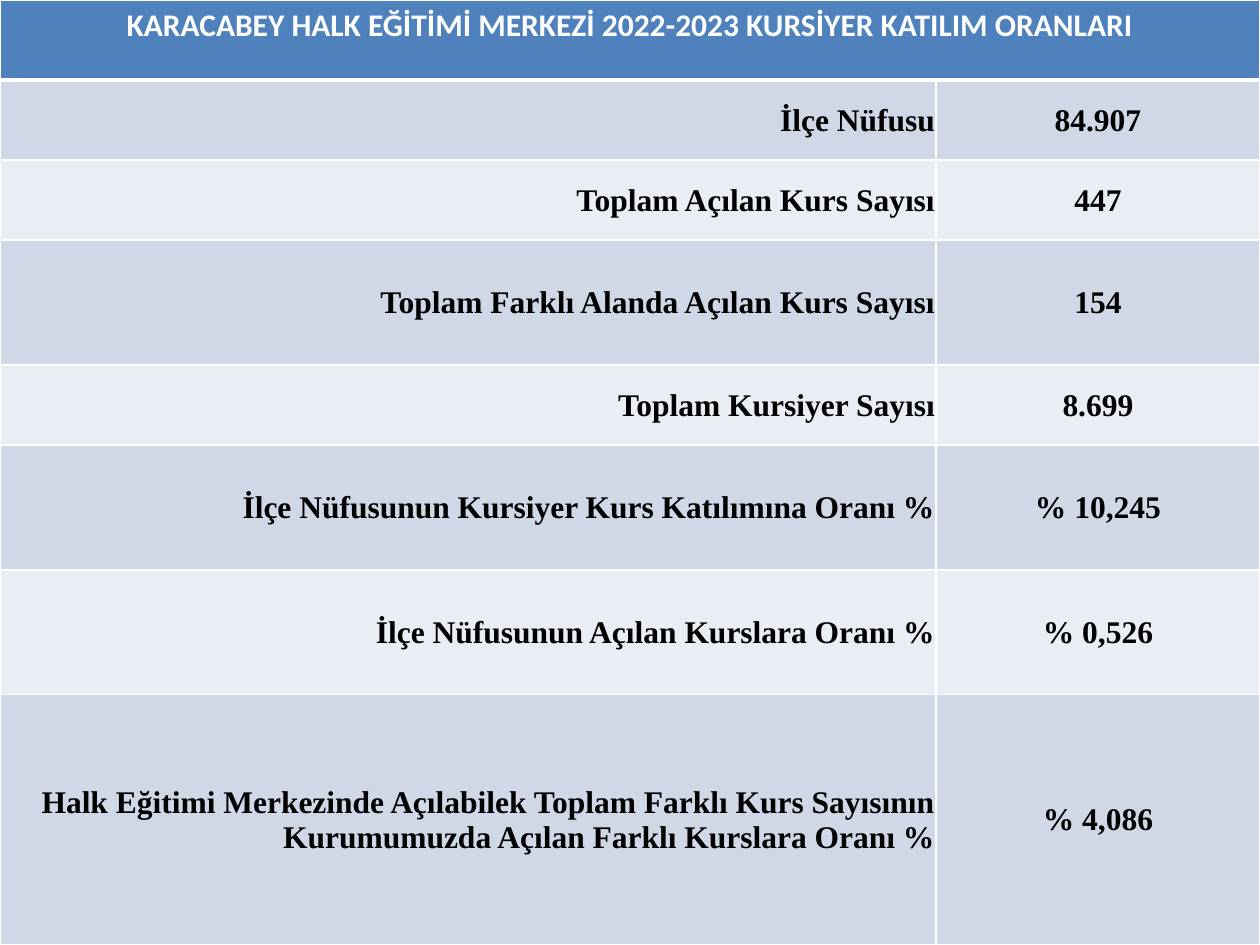
from lxml import etree
from pptx import Presentation
from pptx.dml.color import RGBColor
from pptx.enum.text import MSO_ANCHOR, PP_ALIGN
from pptx.oxml.ns import qn
from pptx.util import Pt

CENTER, RIGHT = PP_ALIGN.CENTER, PP_ALIGN.RIGHT
TOP, MIDDLE = MSO_ANCHOR.TOP, MSO_ANCHOR.MIDDLE
PX = 914400 // 126

THEME = {
    "header": "4F81BD",
    "bands": ("D0D8E8", "E9EDF4"),
    "border": "FFFFFF",
    "header_text": "FFFFFF",
    "body_text": "000000",
    "header_font": "Calibri",
    "body_font": "Times New Roman",
    "size": Pt(18),
    "thin": Pt(1),
    "thick": Pt(3),
}

TITLE = "KARACABEY HALK EĞİTİMİ MERKEZİ 2022-2023 KURSİYER KATILIM ORANLARI"
FIGURES = [
    ("İlçe Nüfusu", "84.907", 80),
    ("Toplam Açılan Kurs Sayısı", "447", 80),
    ("Toplam Farklı Alanda Açılan Kurs Sayısı", "154", 125),
    ("Toplam Kursiyer Sayısı", "8.699", 80),
    ("İlçe Nüfusunun Kursiyer Kurs Katılımına Oranı %", "% 10,245", 125),
    ("İlçe Nüfusunun Açılan Kurslara Oranı %", "% 0,526", 125),
    ("Halk Eğitimi Merkezinde Açılabilek Toplam Farklı Kurs Sayısının "
     "Kurumumuzda Açılan Farklı Kurslara Oranı %", "% 4,086", 250),
]
HEADER_HEIGHT = 80
COLUMN_WIDTHS = (936, 324)


def set_borders(cell, widths):
    properties = cell._tc.get_or_add_tcPr()
    for index, (side, width) in enumerate(widths.items()):
        line = etree.Element(qn(f"a:ln{side}"), w=str(width))
        fill = etree.SubElement(line, qn("a:solidFill"))
        etree.SubElement(fill, qn("a:srgbClr"), val=THEME["border"])
        properties.insert(index, line)


def fill_cell(cell, text, color, alignment, cell_format, font_format, text_color):
    cell.text = text
    for name, value in cell_format.items():
        setattr(cell, name, value)
    cell.fill.solid()
    cell.fill.fore_color.rgb = RGBColor.from_string(color)
    para = cell.text_frame.paragraphs[0]
    para.alignment = alignment
    span = para.runs[0]
    for name, value in font_format.items():
        setattr(span.font, name, value)
    span.font.color.rgb = RGBColor.from_string(text_color)


deck = Presentation()
deck.slide_width, deck.slide_height = 1260 * PX, 945 * PX
page = deck.slides.add_slide(deck.slide_layouts[6])

table = page.shapes.add_table(
    len(FIGURES) + 1, len(COLUMN_WIDTHS), 0, 0, 1260 * PX, 945 * PX
).table
for column, width in zip(table.columns, COLUMN_WIDTHS):
    column.width = width * PX
for row, height in zip(table.rows, [HEADER_HEIGHT] + [figure[2] for figure in FIGURES]):
    row.height = height * PX

header_format = {"vertical_anchor": TOP}
body_format = {
    "vertical_anchor": MIDDLE,
    "margin_left": PX,
    "margin_right": PX,
    "margin_top": PX,
    "margin_bottom": 0,
}
header_font = {"name": THEME["header_font"], "size": THEME["size"], "bold": True}
body_font = {"name": THEME["body_font"], "size": THEME["size"], "bold": True}

table.cell(0, 0).merge(table.cell(0, 1))
fill_cell(table.cell(0, 0), TITLE, THEME["header"], CENTER,
          header_format, header_font, THEME["header_text"])

for row_index, (label, value, _) in enumerate(FIGURES, 1):
    band = THEME["bands"][(row_index - 1) % 2]
    for column_index, (text, alignment) in enumerate(((label, RIGHT), (value, CENTER))):
        fill_cell(table.cell(row_index, column_index), text, band, alignment,
                  body_format, body_font, THEME["body_text"])

for row_index in range(len(table.rows)):
    widths = dict.fromkeys("LRTB", THEME["thin"])
    if row_index == 0:
        widths["B"] = THEME["thick"]
    if row_index == 1:
        widths["T"] = THEME["thick"]
    for column_index in range(len(COLUMN_WIDTHS)):
        set_borders(table.cell(row_index, column_index), widths)

deck.save("out.pptx")
